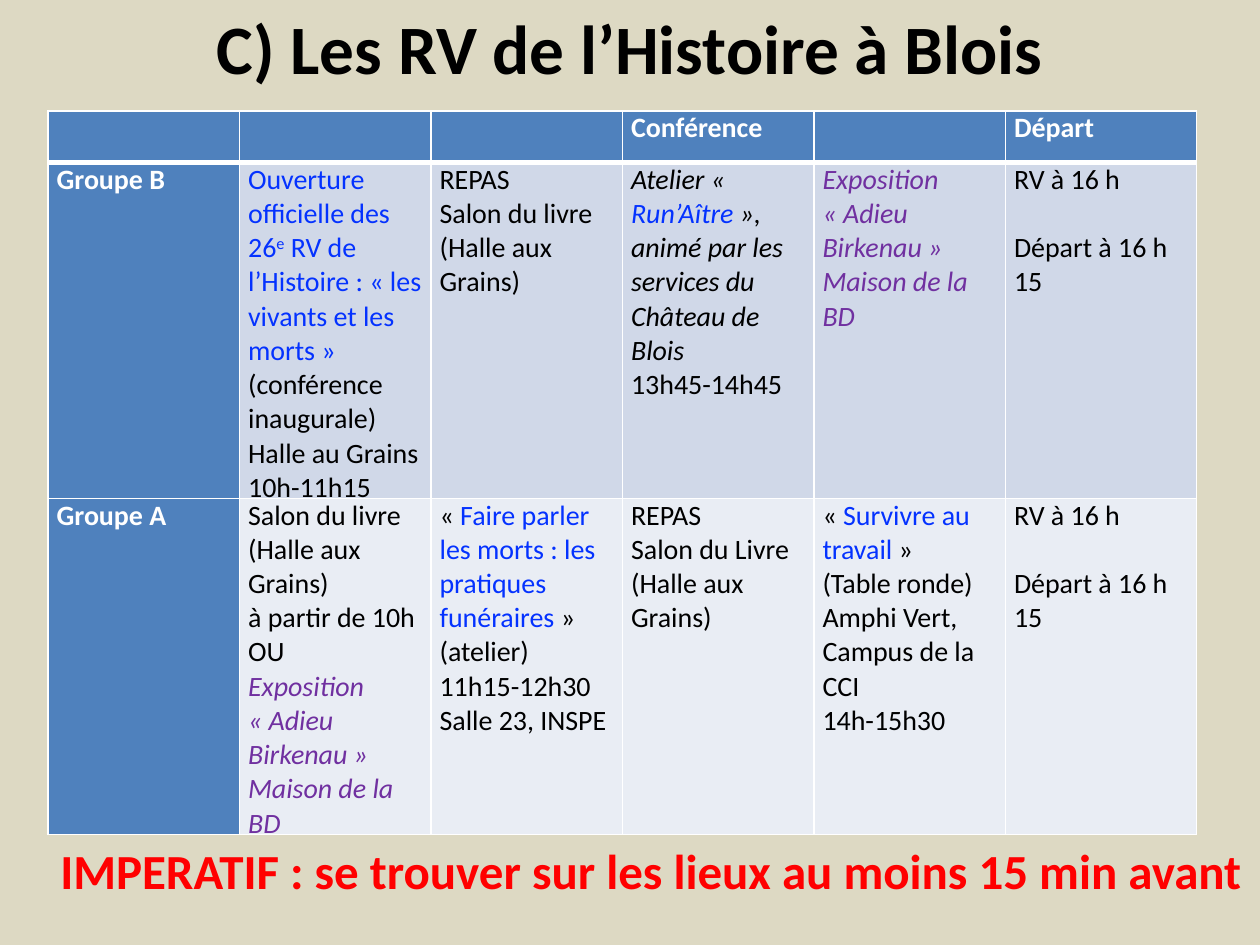
"""Build the timetable slide for the history festival in Blois."""
from lxml.etree import SubElement
from pptx import Presentation
from pptx.dml.color import RGBColor
from pptx.enum.text import MSO_ANCHOR, PP_ALIGN
from pptx.oxml.ns import qn
from pptx.util import Inches, Pt

COLORS = {
    "background": "DDD9C3", "black": "000000", "white": "FFFFFF", "red": "FF0000",
    "blue": "0432FF", "purple": "7030A0", "header": "4F81BD",
    "band_dark": "D0D8E8", "band_light": "E9EDF4",
}
STYLES = {
    "plain": {"color": "black"},
    "heading": {"color": "white", "bold": True},
    "blue": {"color": "blue"},
    "superscript": {"color": "blue", "baseline": 30000},
    "italic": {"color": "black", "italic": True},
    "blue_italic": {"color": "blue", "italic": True},
    "purple": {"color": "purple", "italic": True},
}
TITLE = "C) Les RV de l’Histoire à Blois"
WARNING = "IMPERATIF : se trouver sur les lieux au moins 15 min avant"

EXHIBITION = [[(line, "purple")] for line in
              ("Exposition", "« Adieu Birkenau »", "Maison de la BD")]
DEPARTURE = ["RV à 16 h", "Départ à 16 h 15"]
HEADINGS = ["", "", "", "Conférence", "", "Départ"]
GROUP_B = [
    [[("Groupe B", "heading")]],
    [[("Ouverture officielle des 26", "blue"), ("e", "superscript"),
      (" RV de l’Histoire : « les vivants et les morts » ", "blue"),
      ("(conférence inaugurale)", "plain")],
     "Halle au Grains", "10h-11h15"],
    ["REPAS", "Salon du livre", "(Halle aux Grains)"],
    [[("Atelier « ", "italic"), ("Run’Aître ", "blue_italic"),
      ("», animé par les services du Château de Blois", "italic")],
     "13h45-14h45"],
    EXHIBITION,
    DEPARTURE,
]
GROUP_A = [
    [[("Groupe A", "heading")]],
    ["Salon du livre", "(Halle aux Grains)", "à partir de 10h", "OU", *EXHIBITION],
    [[("« ", "plain"),
      ("Faire parler les morts : les pratiques funéraires ", "blue"), ("»", "plain")],
     "(atelier)", "11h15-12h30", "Salle 23, INSPE"],
    ["REPAS", "Salon du Livre (Halle aux Grains)"],
    [[("« ", "plain"), ("Survivre au travail ", "blue"), ("»", "plain")],
     "(Table ronde)", "Amphi Vert,", "Campus de la CCI", "14h-15h30"],
    DEPARTURE,
]
ROWS = [
    ([[[(heading, "heading")]] if heading else [] for heading in HEADINGS], 0.41, "header"),
    (GROUP_B, 2.35, "band_dark"),
    (GROUP_A, 2.07, "band_light"),
]
COLUMN_WIDTH = 1.52
TEXT_SIZE = 16
LINE_GAP = 19.5


def rgb(name):
    return RGBColor.from_string(COLORS[name])


def format_run(run, size, color, bold=False, italic=False, baseline=None):
    font = run.font
    font.name, font.size, font.bold, font.italic = "Calibri", Pt(size), bold, italic
    font.color.rgb = rgb(color)
    if baseline:
        run._r.get_or_add_rPr().set("baseline", str(baseline))


def add_text(slide, text, box, size, color, wrap):
    frame = slide.shapes.add_textbox(*map(Inches, box)).text_frame
    frame.word_wrap = wrap
    frame.text = text
    format_run(frame.paragraphs[0].runs[0], size, color, bold=True)
    return frame


def add_borders(cell, bottom_width):
    properties = cell._tc.get_or_add_tcPr()
    widths = {"lnL": 1, "lnR": 1, "lnT": 1, "lnB": bottom_width}
    for tag, width in widths.items():
        line = SubElement(properties, qn(f"a:{tag}"), w=str(Pt(width)))
        fill = SubElement(line, qn("a:solidFill"))
        SubElement(fill, qn("a:srgbClr"), val=COLORS["white"])


def fill_cell(cell, lines, color, bottom_width):
    cell.margin_left = cell.margin_right = Inches(0.07)
    cell.margin_top = cell.margin_bottom = 0
    add_borders(cell, bottom_width)
    cell.fill.solid()
    cell.fill.fore_color.rgb = rgb(color)
    frame = cell.text_frame
    for index, line in enumerate(lines):
        paragraph = frame.add_paragraph() if index else frame.paragraphs[0]
        for text, style in [(line, "plain")] if isinstance(line, str) else line:
            run = paragraph.add_run()
            run.text = text
            format_run(run, TEXT_SIZE, **STYLES[style])
    if lines is DEPARTURE:
        frame.paragraphs[-1].space_before = Pt(LINE_GAP)


def add_timetable(slide):
    column_count = len(HEADINGS)
    height = sum(row_height for _, row_height, _ in ROWS)
    table = slide.shapes.add_table(
        len(ROWS), column_count, Inches(0.38), Inches(0.88),
        Inches(COLUMN_WIDTH * column_count), Inches(height)).table
    for column in table.columns:
        column.width = Inches(COLUMN_WIDTH)
    for row_index, (cells, row_height, band) in enumerate(ROWS):
        table.rows[row_index].height = Inches(row_height)
        for column_index, lines in enumerate(cells):
            fill_cell(table.cell(row_index, column_index), lines,
                      band if column_index else "header", 1 if row_index else 3)


def main():
    presentation = Presentation()
    presentation.slide_width, presentation.slide_height = Inches(10), Inches(7.5)
    slide = presentation.slides.add_slide(presentation.slide_layouts[6])
    slide.background.fill.solid()
    slide.background.fill.fore_color.rgb = rgb("background")
    title = add_text(slide, TITLE, (0.5, 0.05, 9, 0.64), 39.6, "black", True)
    title.vertical_anchor = MSO_ANCHOR.MIDDLE
    title.paragraphs[0].alignment = PP_ALIGN.CENTER
    add_timetable(slide)
    add_text(slide, WARNING, (0.38, 6.62, 9.78, 0.57), 28, "red", False)
    presentation.save("out.pptx")


if __name__ == "__main__":
    main()
